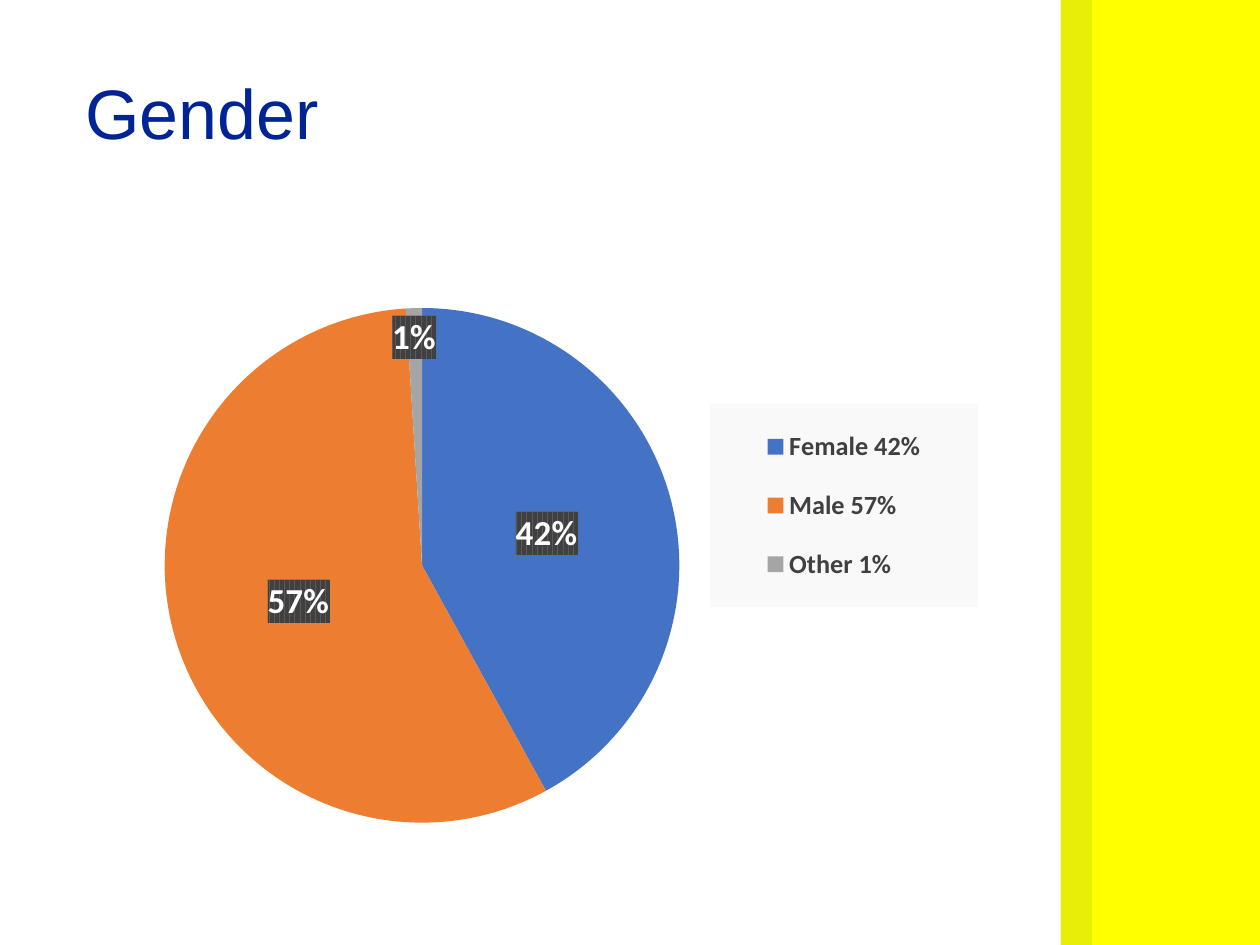
from lxml import etree
from pptx import Presentation
from pptx import util as u
from pptx.chart.data import CategoryChartData
from pptx.dml.color import RGBColor
from pptx.enum import chart as charts, shapes, text
from pptx.oxml import parse_xml
from pptx.oxml.ns import nsdecls, qn

COLORS = {
    "yellow": "FFFF00", "olive": "E9EE09", "navy": "002395",
    "blue": "4472C4", "orange": "ED7D31", "gray": "A5A5A5",
    "white": "FFFFFF", "black": "000000", "dark": "404040",
    "label": "595959", "legend": "F9F9F9",
}
WIDTH, HEIGHT = 25.4, 19.05
GENDERS = [("Female", 42, "blue"), ("Male", 57, "orange"), ("Other", 1, "gray")]


def rgb(name):
    return RGBColor.from_string(COLORS[name])


def style_font(font, name, size, color, bold=False):
    font.name, font.size, font.bold = name, u.Pt(size), bold
    font.color.rgb = rgb(color)


def layout_xml(x, y, width, height, inner=False):
    """Manual chart layout in fractions of the chart area."""
    target = '<c:layoutTarget val="inner"/>' if inner else ""
    return parse_xml(
        f'<c:layout {nsdecls("c")}><c:manualLayout>{target}'
        '<c:xMode val="edge"/><c:yMode val="edge"/>'
        f'<c:x val="{x}"/><c:y val="{y}"/><c:w val="{width}"/><c:h val="{height}"/>'
        '</c:manualLayout></c:layout>')


def set_layout(parent, index, layout):
    for old in parent.findall(qn("c:layout")):
        parent.remove(old)
    parent.insert(index, layout)


class GenderSlide:
    def __init__(self, presentation):
        self.heading_font, self.chart_font = "Arial", "Calibri"
        self.slide = presentation.slides.add_slide(presentation.slide_layouts[6])

    def band(self, left, width, color):
        shape = self.slide.shapes.add_shape(
            shapes.MSO_SHAPE.RECTANGLE, u.Cm(left), 0, u.Cm(width), u.Cm(HEIGHT))
        shape.shadow.inherit = False
        shape.fill.solid()
        shape.fill.fore_color.rgb = rgb(color)
        shape.line.fill.background()

    def title(self, wording, left, top, width, height):
        box = self.slide.shapes.add_textbox(*map(u.Cm, (left, top, width, height)))
        frame = box.text_frame
        frame.word_wrap = True
        frame.vertical_anchor = text.MSO_ANCHOR.TOP
        paragraph = frame.paragraphs[0]
        paragraph.line_spacing = 0.9
        run = paragraph.add_run()
        run.text = wording
        style_font(paragraph.font, self.heading_font, 40, "navy")
        # Soft shadow behind the letters
        run.font._element.append(parse_xml(
            f'<a:effectLst {nsdecls("a")}><a:outerShdw blurRad="38100" dist="38100" '
            f'dir="2700000"><a:srgbClr val="{COLORS["black"]}"><a:alpha val="43000"/>'
            '</a:srgbClr></a:outerShdw></a:effectLst>'))

    def pie(self, left, top, width, height):
        data = CategoryChartData()
        data.categories = [f"{name} {share}%" for name, share, _ in GENDERS]
        data.add_series("Series 1", [share for _, share, _ in GENDERS])
        chart = self.slide.shapes.add_chart(
            charts.XL_CHART_TYPE.PIE, *map(u.Cm, (left, top, width, height)), data).chart
        chart.has_title = False
        style_font(chart.font, self.chart_font, 10, "black")
        chart.plots[0].vary_by_categories = True
        set_layout(chart.element.xpath("//c:plotArea")[0], 0,
                   layout_xml(0.16, 0.11, 0.5, 0.86, inner=True))

        # Slices
        series = chart.plots[0].series[0]
        for index, (_, _, color) in enumerate(GENDERS):
            fill = series.points[index].format.fill
            fill.solid()
            fill.fore_color.rgb = rgb(color)
        self.pie_labels(series)
        self.legend(chart)

    def pie_labels(self, series):
        labels = series.data_labels
        labels.show_value, labels.show_percentage = False, True
        labels.number_format, labels.number_format_is_linked = "0%", False
        # The thin slice carries its label at the rim
        rim_label = series.points[len(GENDERS) - 1].data_label
        positions = charts.XL_LABEL_POSITION
        for label, position in ((labels, positions.CENTER),
                                (rim_label, positions.INSIDE_END)):
            style_font(label.font, self.chart_font, 20, "white", bold=True)
            label.position = position
        for flag, value in (("showVal", "0"), ("showPercent", "1")):
            series._element.xpath(f".//c:dLbl/c:{flag}")[0].set("val", value)
        # Striped plate behind each label
        for text_style in series._element.xpath(".//c:dLbls//c:txPr"):
            for old in text_style.getparent().findall(qn("c:spPr")):
                text_style.getparent().remove(old)
            text_style.addprevious(parse_xml(
                f'<c:spPr {nsdecls("c", "a")}><a:pattFill prst="dkVert">'
                f'<a:fgClr><a:srgbClr val="{COLORS["dark"]}"/></a:fgClr>'
                f'<a:bgClr><a:srgbClr val="{COLORS["label"]}"/></a:bgClr>'
                '</a:pattFill><a:ln><a:noFill/></a:ln></c:spPr>'))

    def legend(self, chart):
        chart.has_legend = True
        legend = chart.legend
        legend.position = charts.XL_LEGEND_POSITION.RIGHT
        legend.include_in_layout = False
        style_font(legend.font, self.chart_font, 15, "dark", bold=True)
        element = chart.element.xpath("//c:legend")[0]
        set_layout(element, 1, layout_xml(0.69, 0.27, 0.26, 0.34))
        plate = etree.fromstring(
            f'<c:spPr {nsdecls("c", "a")}><a:solidFill>'
            f'<a:srgbClr val="{COLORS["legend"]}"/></a:solidFill>'
            '<a:ln><a:noFill/></a:ln></c:spPr>')
        element.find(qn("c:txPr")).addprevious(plate)


def main():
    presentation = Presentation()
    presentation.slide_width, presentation.slide_height = u.Cm(WIDTH), u.Cm(HEIGHT)
    page = GenderSlide(presentation)

    # Side bands
    page.band(21.79, 3.61, "yellow")
    page.band(21.38, 0.64, "olive")

    # Chart and heading
    page.pie(0, 4.88, 20.75, 12.07)
    page.title("Gender", 1.47, 1.47, 19.05, 3.66)
    presentation.save("out.pptx")


if __name__ == "__main__":
    main()
